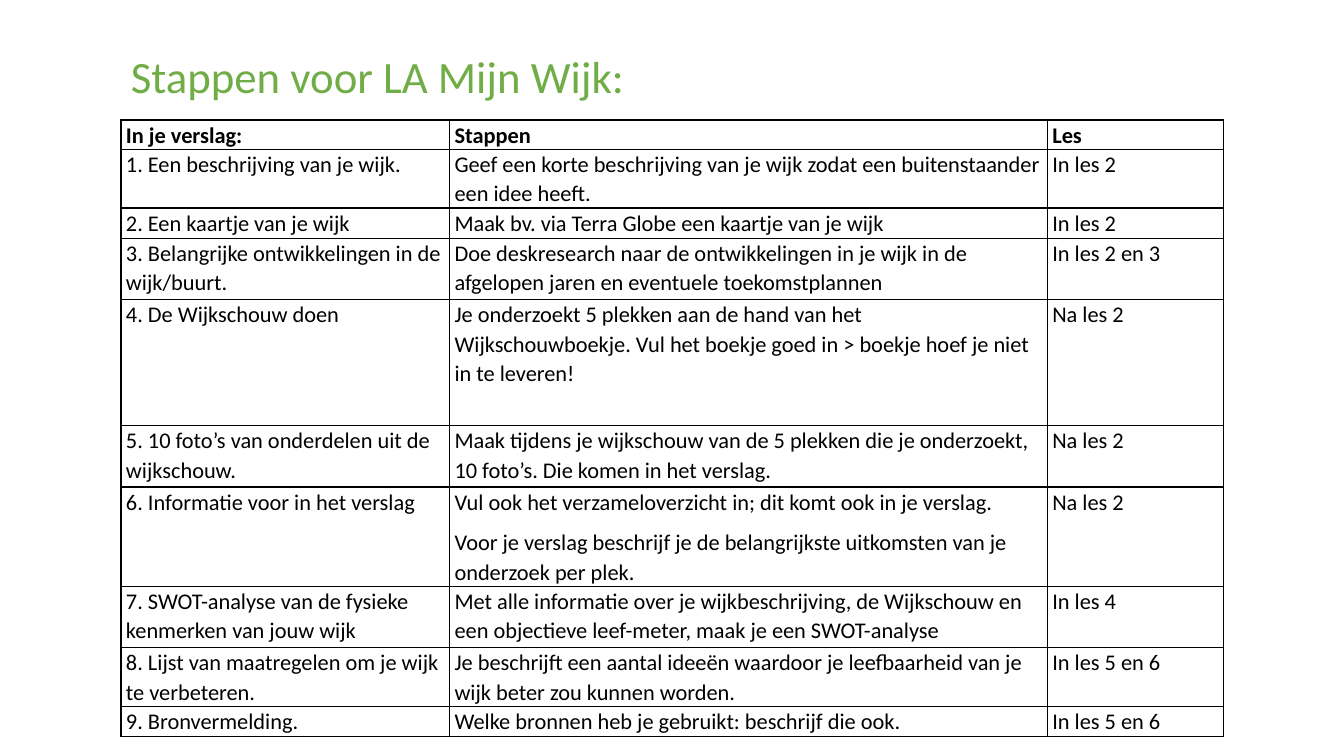
from dataclasses import dataclass

from lxml.etree import SubElement
from pptx import Presentation
from pptx.dml.color import RGBColor
from pptx.oxml.ns import qn
from pptx.util import Pt


@dataclass(frozen=True)
class Theme:
    font: str = "Calibri"
    title_size: Pt = Pt(32)
    body_size: Pt = Pt(16)
    title_color: RGBColor = RGBColor(0x70, 0xAD, 0x47)
    ink: RGBColor = RGBColor(0, 0, 0)
    border_width: Pt = Pt(1)


theme = Theme()


def style_font(paragraph, size, color, bold=False):
    font = paragraph.font
    font.name, font.size, font.bold = theme.font, size, bold
    font.color.rgb = color


def add_borders(cell):
    """Draw a solid line on all four sides; call before setting the fill."""
    properties = cell._tc.get_or_add_tcPr()
    for side in ("a:lnL", "a:lnR", "a:lnT", "a:lnB"):
        line = SubElement(properties, qn(side), w=str(theme.border_width))
        fill = SubElement(line, qn("a:solidFill"))
        SubElement(fill, qn("a:srgbClr"), val=str(theme.ink))


# Row height in points, then report part, steps and lesson
steps = [
    (18.7, "In je verslag:", "Stappen", "Les"),
    (38.2, "1. Een beschrijving van je wijk.",
     "Geef een korte beschrijving van je wijk zodat een buitenstaander een idee heeft.",
     "In les 2"),
    (21.6, "2. Een kaartje van je wijk",
     "Maak bv. via Terra Globe een kaartje van je wijk", "In les 2"),
    (43.9, "3. Belangrijke ontwikkelingen in de wijk/buurt.",
     "Doe deskresearch naar de ontwikkelingen in je wijk in de afgelopen jaren "
     "en eventuele toekomstplannen", "In les 2 en 3"),
    (90, "4. De Wijkschouw doen",
     "Je onderzoekt 5 plekken aan de hand van het Wijkschouwboekje. "
     "Vul het boekje goed in > boekje hoef je niet in te leveren!", "Na les 2"),
    (43.9, "5. 10 foto’s van onderdelen uit de wijkschouw.",
     "Maak tijdens je wijkschouw van de 5 plekken die je onderzoekt, 10 foto’s. "
     "Die komen in het verslag.", "Na les 2"),
    (67, "6. Informatie voor in het verslag",
     "Vul ook het verzameloverzicht in; dit komt ook in je verslag.\n"
     "Voor je verslag beschrijf je de belangrijkste uitkomsten van je onderzoek per plek.",
     "Na les 2"),
    (43.9, "7. SWOT-analyse van de fysieke kenmerken van jouw wijk",
     "Met alle informatie over je wijkbeschrijving, de Wijkschouw en een objectieve "
     "leef-meter, maak je een SWOT-analyse", "In les 4"),
    (38.2, "8. Lijst van maatregelen om je wijk te verbeteren.",
     "Je beschrijft een aantal ideeën waardoor je leefbaarheid van je wijk beter "
     "zou kunnen worden.", "In les 5 en 6"),
    (21.6, "9. Bronvermelding.",
     "Welke bronnen heb je gebruikt: beschrijf die ook.", "In les 5 en 6"),
]
column_widths = [234.7, 427, 126]
left = Pt(86.4)

deck = Presentation()
deck.slide_width, deck.slide_height = Pt(960), Pt(540)
slide = deck.slides.add_slide(deck.slide_layouts[6])

# Step table
plan = slide.shapes.add_table(
    len(steps), len(column_widths), left, Pt(85.7),
    Pt(sum(column_widths)), Pt(sum(step[0] for step in steps))).table
plan.horz_banding = False
for column, width in zip(plan.columns, column_widths):
    column.width = Pt(width)
for row_index, (height, *texts) in enumerate(steps):
    row = plan.rows[row_index]
    row.height = Pt(height)
    for cell, text in zip(row.cells, texts):
        cell.margin_left = cell.margin_right = Pt(3.6)
        cell.margin_top = cell.margin_bottom = Pt(0)
        add_borders(cell)
        cell.fill.background()
        cell.text = text
        for paragraph in cell.text_frame.paragraphs:
            paragraph.line_spacing = 1.07
            paragraph.space_after = Pt(8)
            style_font(paragraph, theme.body_size, theme.ink, bold=row_index == 0)

# Title
title = slide.shapes.add_textbox(left, Pt(31), Pt(443.5), Pt(46)).text_frame
title.word_wrap = True
title.text = "Stappen voor LA Mijn Wijk:"
style_font(title.paragraphs[0], theme.title_size, theme.title_color)

deck.save("out.pptx")
